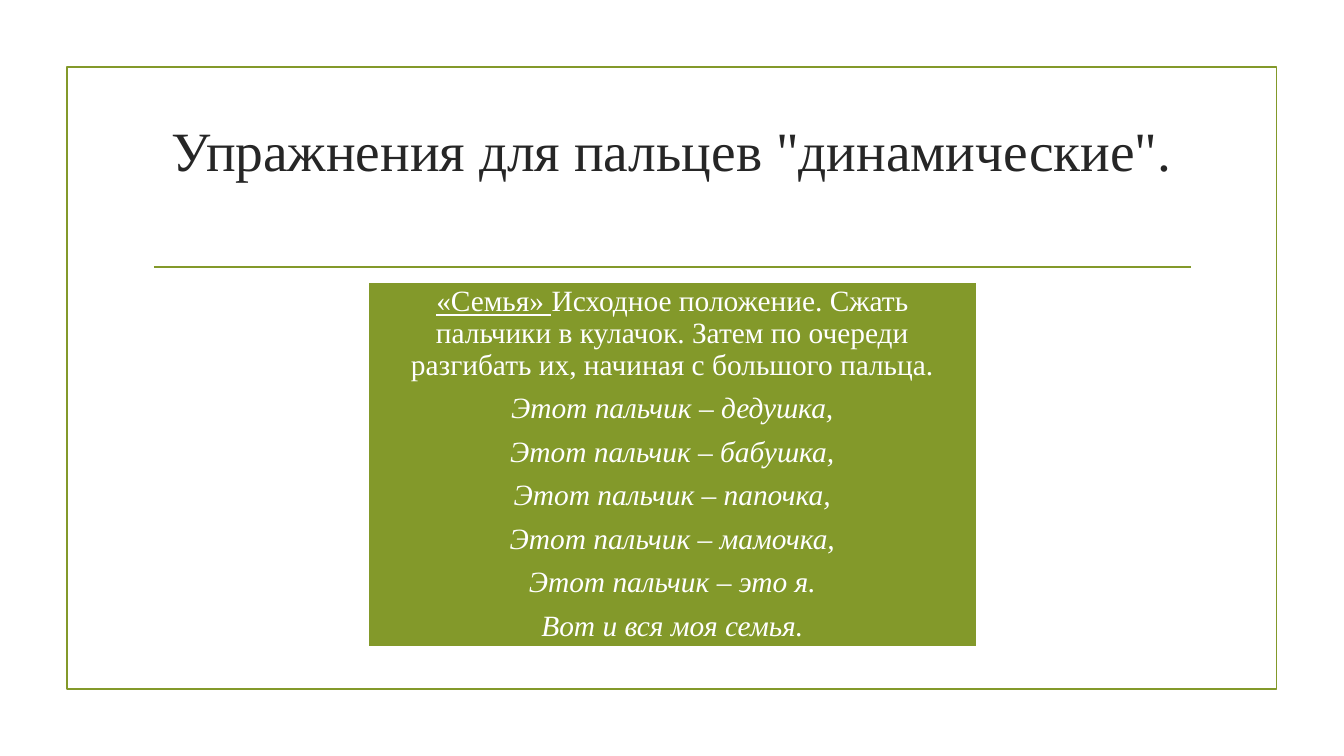
from pptx import Presentation
from pptx.dml.color import RGBColor
from pptx.enum import shapes, text
from pptx.oxml import ns
from pptx.util import Pt
from lxml import etree

GREEN = RGBColor(0x83, 0x99, 0x2A)
WHITE = RGBColor(0xFF, 0xFF, 0xFF)
INK = RGBColor(0x26, 0x26, 0x26)

FINGERS = ["дедушка,", "бабушка,", "папочка,", "мамочка,", "это я."]


def add_span(para, words, *, size=21, color=WHITE, italic=False, underline=False):
    span = para.add_run()
    span.text = words
    font = span.font
    font.name, font.size = "Times New Roman", Pt(size)
    font.italic, font.underline = italic, underline
    font.color.rgb = color


class Page:
    """Draw styled elements on one slide, with lengths in points."""

    def __init__(self, slide, accent=GREEN, weight=1.25):
        self.slide = slide
        self.accent = accent
        self.weight = Pt(weight)

    def panel(self, left, top, width, height, fill=None, line=None):
        box = self.slide.shapes.add_shape(
            shapes.MSO_SHAPE.RECTANGLE, Pt(left), Pt(top), Pt(width), Pt(height))
        box.shadow.inherit = False
        if fill is None:
            box.fill.background()
        else:
            box.fill.solid()
            box.fill.fore_color.rgb = fill
        box.line.color.rgb = line or self.accent
        box.line.width = self.weight
        return box

    def rule(self, left, right, y):
        line = self.slide.shapes.add_connector(
            shapes.MSO_CONNECTOR.STRAIGHT, Pt(left), Pt(y), Pt(right), Pt(y))
        line.line.color.rgb = self.accent
        line.line.width = self.weight
        etree.SubElement(line._element.spPr, ns.qn("a:effectLst"))

    def title(self, left, top, width, height, words):
        box = self.slide.shapes.add_textbox(Pt(left), Pt(top), Pt(width), Pt(height))
        frame = self.frame(box, text.MSO_ANCHOR.TOP, 6)
        para = frame.paragraphs[0]
        para.alignment = text.PP_ALIGN.CENTER
        add_span(para, words, size=39.6, color=INK)

    def verses(self, box, paragraphs):
        frame = self.frame(box, text.MSO_ANCHOR.MIDDLE, 6.6)
        for index, spans in enumerate(paragraphs):
            para = frame.add_paragraph() if index else frame.paragraphs[0]
            para.alignment = text.PP_ALIGN.CENTER
            para.line_spacing = 0.9
            para.space_after = Pt(8.4)
            for words, style in spans:
                add_span(para, words, **style)

    def frame(self, box, anchor, inset):
        frame = box.text_frame
        frame.word_wrap = True
        frame.vertical_anchor = anchor
        frame.margin_left = frame.margin_right = Pt(inset)
        frame.margin_top = frame.margin_bottom = Pt(inset)
        return frame


def main():
    deck = Presentation()
    deck.slide_width, deck.slide_height = Pt(960), Pt(540)
    page = Page(deck.slides.add_slide(deck.slide_layouts[6]))

    page.panel(47.75, 48, 864, 444)
    page.rule(110, 850.5, 190.8)
    page.title(102, 77, 756, 103, 'Упражнения для пальцев "динамические".')

    intro = [
        ("«Семья» ", {"underline": True}),
        ("Исходное положение. Сжать пальчики в кулачок. Затем по очереди "
         "разгибать их, начиная с большого пальца.", {}),
    ]
    rhyme = [f"Этот пальчик – {name}" for name in FINGERS] + ["Вот и вся моя семья."]
    card = page.panel(262.8, 201.6, 434.9, 260.6, fill=GREEN, line=WHITE)
    page.verses(card, [intro] + [[(verse, {"italic": True})] for verse in rhyme])

    deck.save("out.pptx")


if __name__ == "__main__":
    main()
